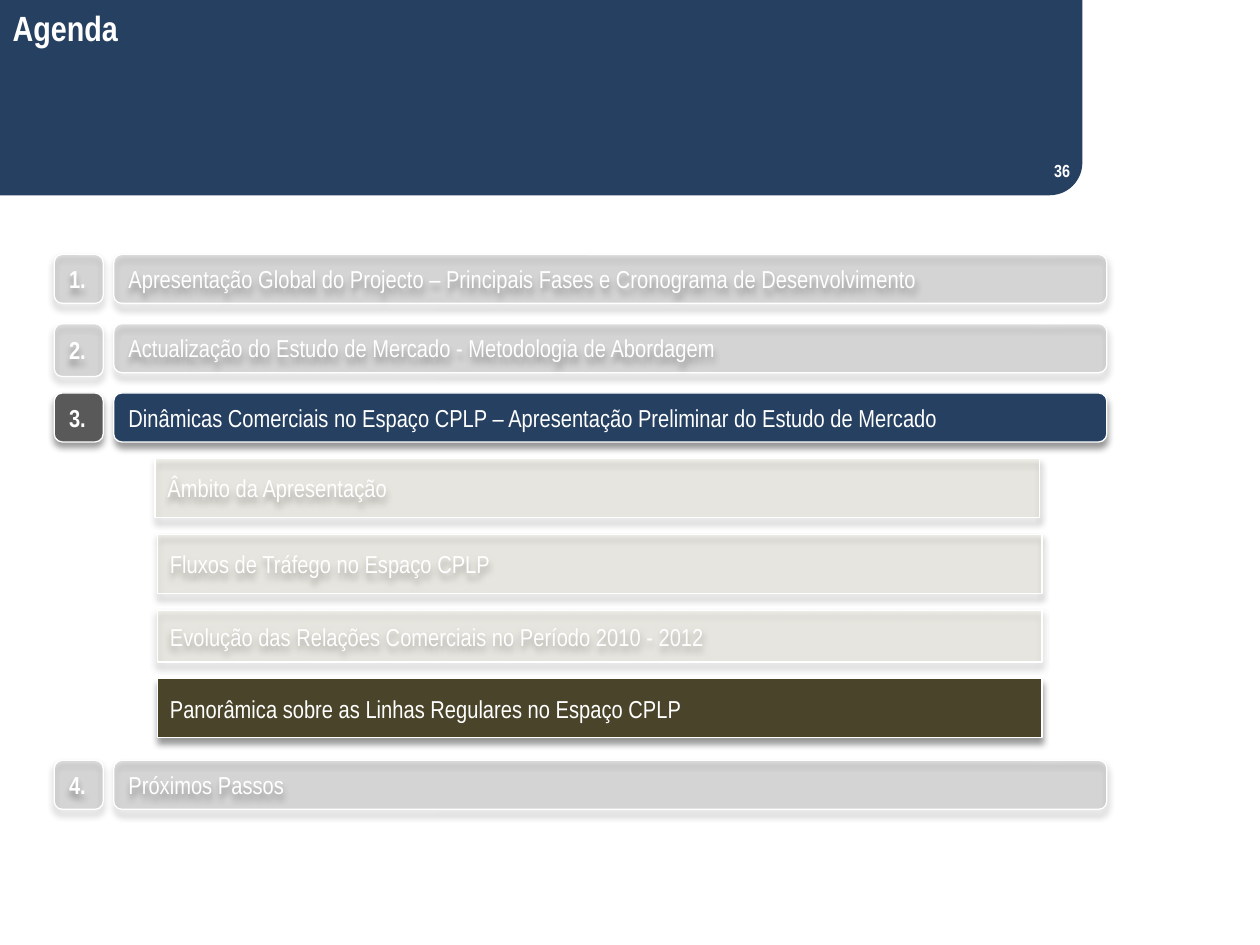
from dataclasses import dataclass

from lxml.etree import SubElement
from pptx import Presentation
from pptx.dml.color import RGBColor
from pptx.enum.shapes import MSO_SHAPE
from pptx.enum.text import MSO_ANCHOR, MSO_AUTO_SIZE, PP_ALIGN
from pptx.oxml.ns import qn
from pptx.util import Pt


@dataclass(frozen=True)
class Theme:
    font: str = "Arial Narrow"
    navy: str = "254061"
    grey: str = "595959"
    sand: str = "C4BD97"
    olive: str = "4A452A"
    white: str = "FFFFFF"
    black: str = "000000"
    title_size: int = 20
    item_size: int = 14
    number_size: int = 10
    faded: int = 17
    shadow_alpha: int = 40


@dataclass(frozen=True)
class Topic:
    text: str
    top: float
    active: bool = False
    number_height: float = 28


@dataclass(frozen=True)
class Subtopic:
    text: str
    height: float = 33.8
    shift: float = 0
    active: bool = False


THEME = Theme()
ROW_TOP, ROW_PITCH = 145.4, 39.6
TOPICS = [
    Topic("Apresentação Global do Projecto – Principais Fases e Cronograma de Desenvolvimento",
          ROW_TOP),
    Topic("Actualização do Estudo de Mercado - Metodologia de Abordagem",
          ROW_TOP + ROW_PITCH, number_height=30.2),
    Topic("Dinâmicas Comerciais no Espaço CPLP – Apresentação Preliminar do Estudo de Mercado",
          ROW_TOP + 2 * ROW_PITCH, active=True),
    Topic("Próximos Passos", 434.5),
]
SUBTOPICS = [
    Subtopic("Âmbito da Apresentação", shift=-1.4),
    Subtopic("Fluxos de Tráfego no Espaço CPLP"),
    Subtopic("Evolução das Relações Comerciais no Período 2010 - 2012", height=29.5),
    Subtopic("Panorâmica sobre as Linhas Regulares no Espaço CPLP", active=True),
]


def write(frame, text, size=THEME.item_size, bold=False, align=PP_ALIGN.LEFT,
          anchor=MSO_ANCHOR.MIDDLE):
    frame.word_wrap = True
    frame.auto_size = MSO_AUTO_SIZE.NONE
    frame.vertical_anchor = anchor
    frame.text = text
    paragraph = frame.paragraphs[0]
    paragraph.alignment = align
    font = paragraph.runs[0].font
    font.name, font.size, font.bold = THEME.font, Pt(size), bold
    font.color.rgb = RGBColor.from_string(THEME.white)


def add_filled(slide, preset, box, color, adjustments=()):
    shape = slide.shapes.add_shape(preset, *map(Pt, box))
    shape.shadow.inherit = False
    shape.fill.solid()
    shape.fill.fore_color.rgb = RGBColor.from_string(color)
    shape.line.fill.background()
    for index, value in enumerate(adjustments):
        shape.adjustments[index] = value
    return shape


def add_alpha(color_element, percent):
    SubElement(color_element, qn("a:alpha"), val=str(percent * 1000))


def add_drop_shadow(shape):
    effects = shape._element.spPr.find(qn("a:effectLst"))
    shadow = SubElement(effects, qn("a:outerShdw"), blurRad=str(Pt(4)), dist=str(Pt(3)),
                        dir="5400000", rotWithShape="0")
    add_alpha(SubElement(shadow, qn("a:srgbClr"), val=THEME.black), THEME.shadow_alpha)


def add_button(slide, preset, box, text, color, faded, bold=False):
    button = add_filled(slide, preset, box, color)
    if faded:
        fill_color = button._element.spPr.find(qn("a:solidFill"))[0]
        add_alpha(fill_color, THEME.faded)
    button.line.color.rgb = RGBColor.from_string(THEME.white)
    button.line.width = Pt(0.75)
    add_drop_shadow(button)
    write(button.text_frame, text, bold=bold)


def add_header(slide, box, title_text, page):
    left, top, width, height = box
    diagonal = MSO_SHAPE.ROUND_2_DIAG_RECTANGLE
    add_filled(slide, diagonal, box, THEME.navy)
    add_filled(slide, diagonal, (left, top, 550, 64.8), THEME.navy, (0, 0))

    title = slide.shapes.title
    title.left, title.top, title.width, title.height = map(Pt, (left, top, 317.5, 31.7))
    write(title.text_frame, title_text, THEME.title_size, bold=True, anchor=MSO_ANCHOR.TOP)
    slide.shapes._spTree.append(title._element)  # bring in front of the banner

    page_width, page_height = 167.8, 28.8
    page_number = slide.shapes.add_textbox(
        Pt(left + width - page_width), Pt(top + height - page_height),
        Pt(page_width), Pt(page_height))
    write(page_number.text_frame, page, THEME.number_size, bold=True, align=PP_ALIGN.RIGHT)


def add_topics(slide, left, width, topics):
    number_width, bar_offset, bar_height = 28, 34, 28
    rounded = MSO_SHAPE.ROUNDED_RECTANGLE
    for number, topic in enumerate(topics, 1):
        add_button(slide, rounded, (left, topic.top, number_width, topic.number_height),
                   f"{number}.", THEME.grey, not topic.active, bold=True)
        add_button(slide, rounded,
                   (left + bar_offset, topic.top, width - bar_offset, bar_height),
                   topic.text, THEME.navy if topic.active else THEME.grey, not topic.active)


def add_subtopics(slide, left, top, width, subtopics, gap=9.6):
    for subtopic in subtopics:
        add_button(slide, MSO_SHAPE.RECTANGLE,
                   (left + subtopic.shift, top, width, subtopic.height), subtopic.text,
                   THEME.olive if subtopic.active else THEME.sand, not subtopic.active)
        top += subtopic.height + gap


def main():
    presentation = Presentation()
    presentation.slide_width, presentation.slide_height = Pt(720), Pt(540)
    slide = presentation.slides.add_slide(presentation.slide_layouts[5])
    add_header(slide, (0, 0, 618.5, 111.6), "Agenda", "36")
    add_topics(slide, 31, 601.5, TOPICS)
    add_subtopics(slide, 90, 262, 505.4, SUBTOPICS)
    presentation.save("out.pptx")


if __name__ == "__main__":
    main()
